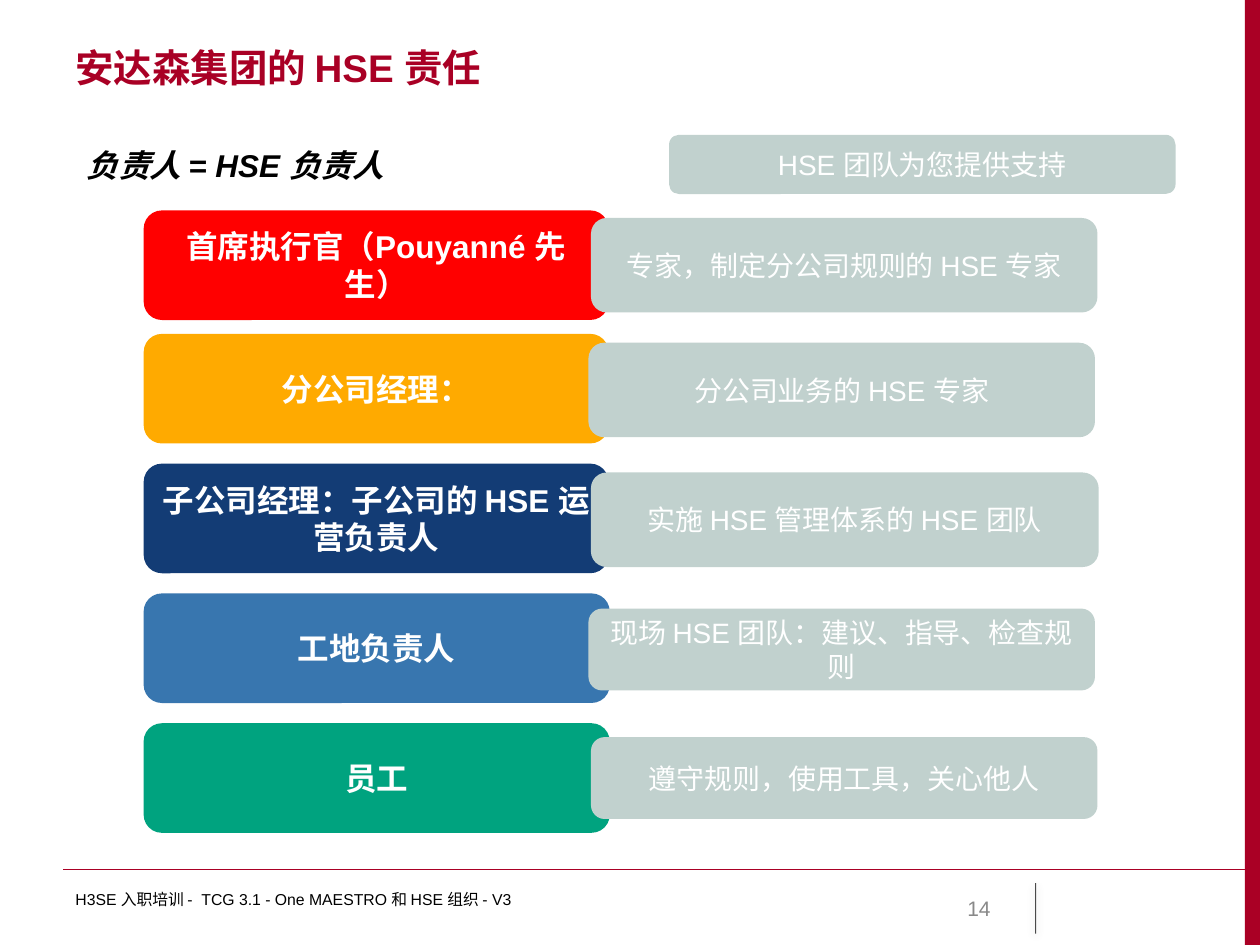
import pptx
import pptx.util
import pptx.dml.color
import pptx.enum.shapes
import pptx.enum.text
import lxml.etree

Inches = pptx.util.Inches
Kind = pptx.enum.shapes.MSO_SHAPE
Align = pptx.enum.text.PP_ALIGN
Anchor = pptx.enum.text.MSO_ANCHOR
NS = "http://schemas.openxmlformats.org/drawingml/2006/main"
COLORS = {
    "brand": "AA0025", "title": "A90025", "red": "FF0000", "amber": "FFAA00",
    "navy": "133C75", "blue": "3876AF", "green": "00A37F", "pale": "C1D1CE",
    "white": "FFFFFF", "black": "000000", "gray": "898989",
}


def tint(name):
    return pptx.dml.color.RGBColor.from_string(COLORS[name])


def put(text, box, fill=None, kind=Kind.ROUNDED_RECTANGLE, size=16, color="white",
        bold=False, italic=False, align=Align.CENTER, anchor=Anchor.MIDDLE):
    place = [Inches(n) for n in box]
    if fill:
        shape = slide.shapes.add_shape(kind, *place)
        shape.shadow.inherit = False
        shape.fill.solid()
        shape.fill.fore_color.rgb = tint(fill)
        shape.line.fill.background()
    else:
        shape = slide.shapes.add_textbox(*place)
    if text:
        frame = shape.text_frame
        frame.word_wrap = True
        frame.vertical_anchor = anchor
        para = frame.paragraphs[0]
        para.alignment = align
        run = para.add_run()
        run.text = text
        font = run.font
        font.name = "Arial"
        font.size = pptx.util.Pt(size)
        font.bold = bold
        font.italic = italic
        font.color.rgb = tint(color)


deck = pptx.Presentation()
deck.slide_width = Inches(10)
deck.slide_height = Inches(7.5)
slide = deck.slides.add_slide(deck.slide_layouts[6])

put("", (9.88, 0, 0.12, 7.5), fill="brand", kind=Kind.RECTANGLE)

rules = []
for ends, color, width in [
    ((0.5, 6.9, 10, 6.9), "brand", 0.75),
    ((8.22, 7.01, 8.22, 7.41), "black", 0.5),
]:
    rule = slide.shapes.add_connector(
        pptx.enum.shapes.MSO_CONNECTOR.STRAIGHT, *[Inches(n) for n in ends])
    rule.line.color.rgb = tint(color)
    rule.line.width = pptx.util.Pt(width)
    effect = lxml.etree.SubElement(rule._element.spPr, f"{{{NS}}}effectLst")
    rules.append((rule, effect))

rule, effect = rules[1]
ink = rule._element.spPr.find(f".//{{{NS}}}srgbClr")
lxml.etree.SubElement(ink, f"{{{NS}}}alpha", val="70000")
shade = lxml.etree.SubElement(
    effect, f"{{{NS}}}outerShdw", blurRad="63500", dist="20320", dir="5400000", rotWithShape="0")
ink = lxml.etree.SubElement(shade, f"{{{NS}}}srgbClr", val=COLORS["black"])
lxml.etree.SubElement(ink, f"{{{NS}}}alpha", val="38000")

put("安达森集团的 HSE 责任", (0.5, 0.3, 9.15, 0.69), size=22, color="title",
    bold=True, align=Align.LEFT, anchor=Anchor.TOP)
put("负责人 = HSE 负责人", (0.59, 1.11, 4.7, 0.4), size=18, color="black",
    bold=True, italic=True, align=Align.LEFT, anchor=Anchor.TOP)
put("HSE 团队为您提供支持", (5.31, 1.07, 4.02, 0.47), fill="pale")

levels = [
    (1.67, "red", "首席执行官（Pouyanné 先生）", 3.69,
     "专家，制定分公司规则的 HSE 专家", (4.69, 1.73, 4.02, 0.75)),
    (2.65, "amber", "分公司经理：", 3.69,
     "分公司业务的 HSE 专家", (4.67, 2.72, 4.02, 0.75)),
    (3.68, "navy", "子公司经理：子公司的 HSE 运营负责人", 3.69,
     "实施 HSE 管理体系的 HSE 团队", (4.69, 3.75, 4.03, 0.75)),
    (4.71, "blue", "工地负责人", 3.7,
     "现场 HSE 团队：建议、指导、检查规则", (4.67, 4.83, 4.02, 0.65)),
    (5.74, "green", "员工", 3.7,
     "遵守规则，使用工具，关心他人", (4.69, 5.85, 4.02, 0.65)),
]
for top, fill, role, width, task, box in levels:
    put(role, (1.14, top, width, 0.87), fill=fill, size=18, bold=True)
    put(task, box, fill="pale")

put("H3SE 入职培训 -  TCG 3.1 - One MAESTRO 和 HSE 组织 - V3", (0.5, 7.01, 6.08, 0.4),
    size=9, color="black", align=Align.LEFT, anchor=Anchor.TOP)
put("14", (7.17, 7.01, 0.79, 0.4), size=12, color="gray", align=Align.RIGHT)

deck.save("out.pptx")
